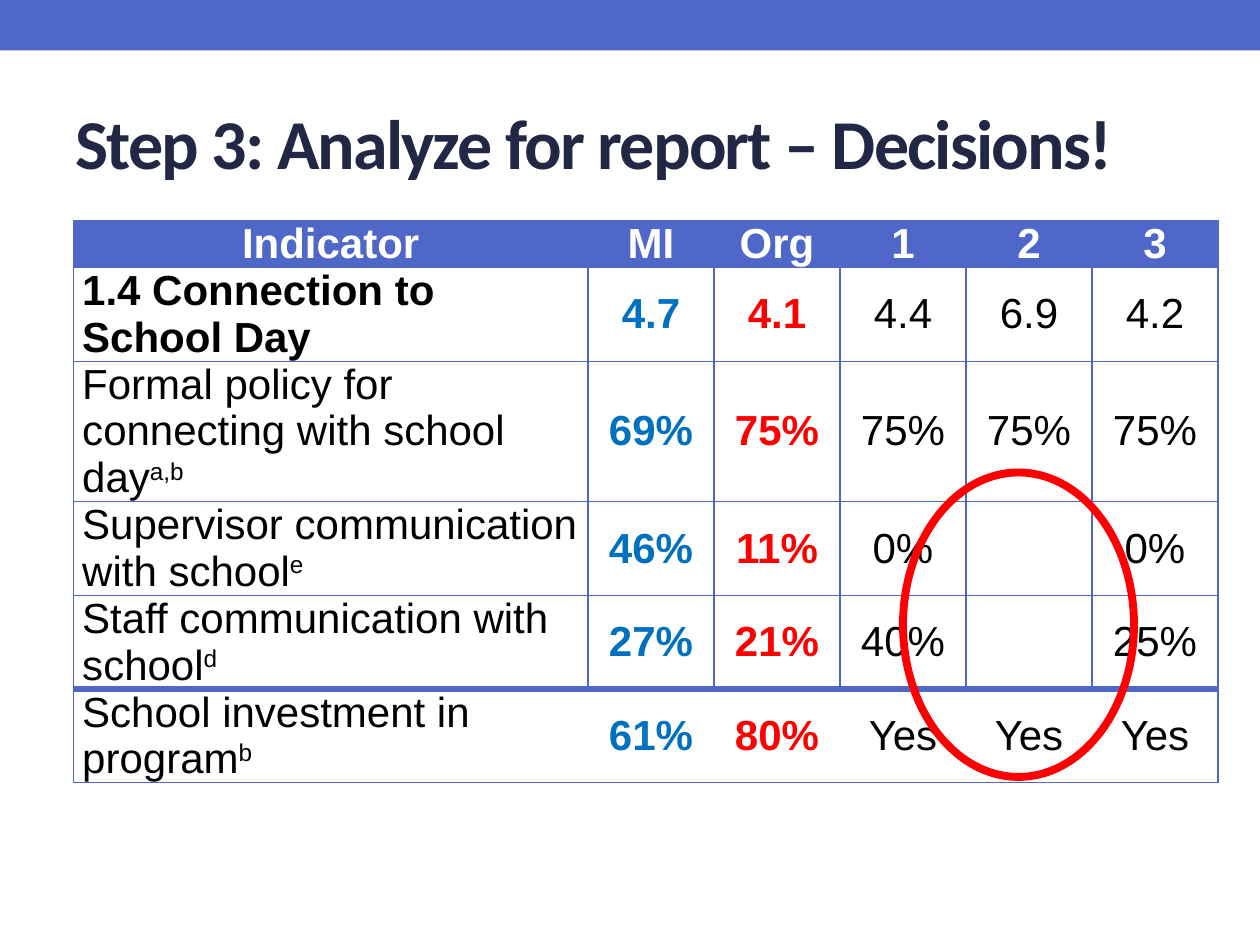
import lxml.etree
import pptx
import pptx.dml.color
import pptx.enum.shapes
import pptx.enum.text
import pptx.oxml.ns
import pptx.util

Pt = pptx.util.Pt
qn = pptx.oxml.ns.qn
Shape = pptx.enum.shapes.MSO_SHAPE
Align = pptx.enum.text.PP_ALIGN
Anchor = pptx.enum.text.MSO_ANCHOR

BLUE, RED, BLACK = "4E67C8", "FF0000", "000000"


def paint(part, code):
    """Give a fill, line fill or font a solid colour."""
    if hasattr(part, "solid"):
        part.solid()
        part = part.fore_color
    else:
        part = part.color
    part.rgb = pptx.dml.color.RGBColor.from_string(code)


def write(para, text, code, **form):
    run = para.add_run()
    run.text = text
    paint(run.font, code)
    for name, value in form.items():
        setattr(run.font, name, value)
    return run


deck = pptx.Presentation()
deck.slide_width, deck.slide_height = Pt(720), Pt(540)
slide = deck.slides.add_slide(deck.slide_layouts[5])

# Top bar
bar = slide.shapes.add_shape(Shape.RECTANGLE, 0, 0, Pt(720), Pt(28.8))
bar.shadow.inherit = False
paint(bar.fill, BLUE)
bar.line.fill.background()

# Title
title = slide.shapes.title
place = {"left": 36, "top": 41.76, "width": 648, "height": 77.76}
for name, value in place.items():
    setattr(title, name, Pt(value))
frame = title.text_frame
look = {"vertical_anchor": Anchor.MIDDLE, "word_wrap": True,
        "auto_size": pptx.enum.text.MSO_AUTO_SIZE.NONE}
for name, value in look.items():
    setattr(frame, name, value)
para = frame.paragraphs[0]
para.alignment = Align.LEFT
run = write(para, "Step 3: Analyze for report – Decisions!", "212745",
            name="Calibri", size=Pt(40), bold=True)
run.font._element.set("spc", "-100")

# Table: each label is a text and its superscript note
rows = [
    (("Indicator", ""), "MI", "Org", "1", "2", "3"),
    (("1.4 Connection to School Day", ""), "4.7", "4.1", "4.4", "6.9", "4.2"),
    (("Formal policy for connecting with school day", "a,b"),
     "69%", "75%", "75%", "75%", "75%"),
    (("Supervisor communication with school", "e"),
     "46%", "11%", "0%", "", "0%"),
    (("Staff communication with school", "d"),
     "27%", "21%", "40%", "", "25%"),
    (("School investment in program", "b"),
     "61%", "80%", "Yes", "Yes", "Yes"),
]
widths = [294] + [72] * 5
heights = [18, 36, 72, 36, 36, 36]
inks = [BLACK, "0070C0", RED, BLACK, BLACK, BLACK]
last = len(rows) - 1
end = len(widths) - 1

table = slide.shapes.add_table(
    len(rows), len(widths), Pt(42), Pt(126),
    Pt(sum(widths)), Pt(sum(heights))).table
table.first_row = table.horz_banding = False
for col, width in zip(table.columns, widths):
    col.width = Pt(width)
for row, height in zip(table.rows, heights):
    row.height = Pt(height)

for r, row in enumerate(rows):
    for c, item in enumerate(row):
        cell = table.cell(r, c)
        text, note = item if c == 0 else (item, "")
        head = r == 0
        label = c == 0 and not head
        form = {
            "margin_left": Pt(5), "margin_right": Pt(5),
            "margin_top": 0, "margin_bottom": 0,
            "vertical_anchor": Anchor.TOP if label else Anchor.MIDDLE,
        }
        for name, value in form.items():
            setattr(cell, name, value)
        para = cell.text_frame.paragraphs[0]
        para.alignment = Align.LEFT if label else Align.CENTER
        font = {"name": "Arial", "size": Pt(24),
                "bold": head or c in (1, 2) or (r == 1 and c == 0)}
        ink = "FFFFFF" if head else inks[c]
        if text:
            write(para, text, ink, **font)
        if note:
            run = write(para, note, ink, **font)
            run.font._element.set("baseline", "30000")

        # The last row has a heavy top rule and no inner uprights
        sides = {
            "a:lnL": 0.75 if r < last or c == 0 else 0,
            "a:lnR": 0.75 if r < last or c == end else 0,
            "a:lnT": 4 if r == last else 0.75,
            "a:lnB": 4 if r == last - 1 else 0.75,
        }
        props = cell._tc.get_or_add_tcPr()
        for tag, weight in sides.items():
            line = lxml.etree.SubElement(props, qn(tag), w=str(Pt(weight)))
            if weight:
                fill = lxml.etree.SubElement(line, qn("a:solidFill"))
                lxml.etree.SubElement(fill, qn("a:srgbClr"), val=BLUE)
            else:
                lxml.etree.SubElement(line, qn("a:noFill"))
        if head:
            paint(cell.fill, BLUE)
        else:
            cell.fill.background()

# Ring around the missing values
ring = slide.shapes.add_shape(
    Shape.OVAL, Pt(516), Pt(270), Pt(132), Pt(174))
ring.shadow.inherit = False
ring.fill.background()
paint(ring.line.fill, RED)
ring.line.width = Pt(4.5)

deck.save("out.pptx")
